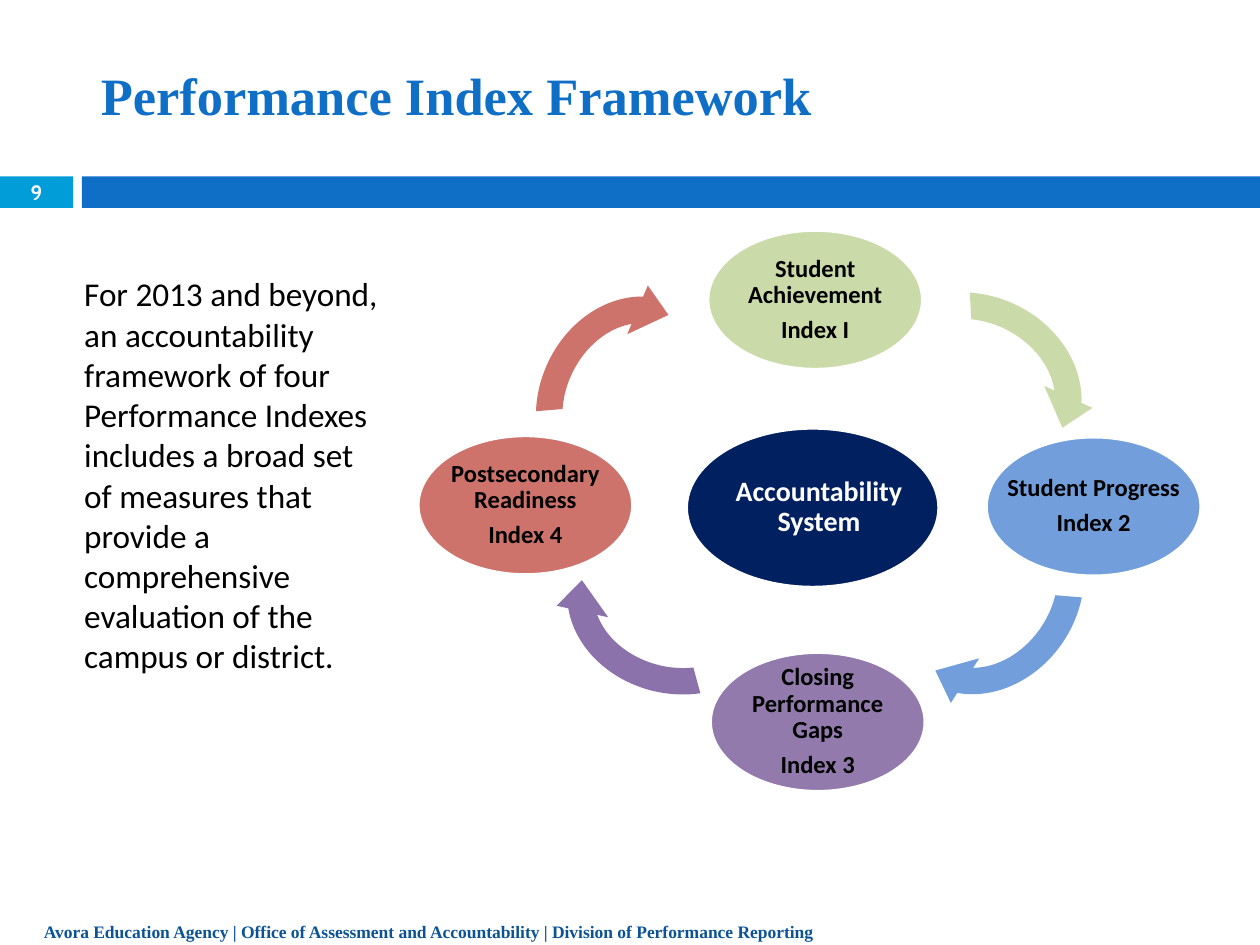
import dataclasses

import pptx
import pptx.dml.color
import pptx.enum.shapes
import pptx.enum.text
import pptx.util

Inches = pptx.util.Inches
Pt = pptx.util.Pt
SHAPE = pptx.enum.shapes.MSO_SHAPE
ALIGN = pptx.enum.text.PP_ALIGN
ANCHOR = pptx.enum.text.MSO_ANCHOR


@dataclasses.dataclass(frozen=True)
class Theme:
    blue: str = "0F6FC6"
    cyan: str = "009DD9"
    footer_blue: str = "0B5395"
    navy: str = "002060"
    green: str = "CADAA9"
    sky: str = "729FDC"
    purple: str = "927AAD"
    arrow_purple: str = "8B72AA"
    red: str = "CD736B"
    white: str = "FFFFFF"
    black: str = "000000"
    serif: str = "Times New Roman"
    sans: str = "Calibri"
    number_font: str = "Cabin"
    title_size: float = 30
    body_size: float = 19
    hub_size: float = 16
    index_size: float = 14
    number_size: float = 11.9
    footer_size: float = 10


THEME = Theme()


def rgb(value):
    return pptx.dml.color.RGBColor.from_string(value)


def place(shape, box):
    shape.left, shape.top, shape.width, shape.height = map(Inches, box)


def write(shape, text, *, size, font=THEME.sans, color=THEME.black, bold=True,
          align=ALIGN.LEFT, anchor=ANCHOR.TOP, spacing=None, after=0, inset=None):
    """Fill a shape with text, one paragraph for each line."""
    frame = shape.text_frame
    frame.word_wrap = True
    frame.vertical_anchor = anchor
    if inset is not None:
        frame.margin_left = frame.margin_right = Inches(inset)
        frame.margin_top = frame.margin_bottom = Inches(inset)
    frame.text = text
    for paragraph in frame.paragraphs:
        paragraph.alignment = align
        paragraph.line_spacing = spacing
        paragraph.space_before = Pt(0)
        paragraph.space_after = Pt(after)
        for run in paragraph.runs:
            run.font.name = font
            run.font.size = Pt(size)
            run.font.bold = bold
            run.font.color.rgb = rgb(color)


def add_text(shapes, box, text, **text_format):
    write(shapes.add_textbox(*map(Inches, box)), text, **text_format)


def add_filled(shapes, kind, box, fill, outline=None):
    shape = shapes.add_shape(kind, *map(Inches, box))
    shape.shadow.inherit = False
    shape.fill.solid()
    shape.fill.fore_color.rgb = rgb(fill)
    if outline:
        shape.line.color.rgb = rgb(outline)
        shape.line.width = Pt(1.5)
    else:
        shape.line.fill.background()
    return shape


def add_node(slide, box, label_box, text, fill, size=THEME.index_size,
             color=THEME.black):
    """Group an ellipse with its label."""
    node = slide.shapes.add_group_shape().shapes
    add_filled(node, SHAPE.OVAL, box, fill, THEME.white)
    add_text(node, label_box, text, size=size, color=color, align=ALIGN.CENTER,
             anchor=ANCHOR.MIDDLE, spacing=0.9, after=0.35 * size, inset=0.02)


def add_index(slide, left, top, label_width, text, fill):
    width, height, label_height = 1.7, 1.1, 0.78
    label_box = (left + (width - label_width) / 2,
                 top + (height - label_height) / 2, label_width, label_height)
    add_node(slide, (left, top, width, height), label_box, text, fill)


def add_cycle_arrow(slide, left, top, rotation, fill):
    arrow = add_filled(slide.shapes, SHAPE.CIRCULAR_ARROW,
                       (left, top, 1.94, 1.68), fill)
    arrow.rotation = rotation
    for i, value in enumerate((0.125, 11.42, 204.58, 145.35, 0.125)):
        arrow.adjustments[i] = value


def main():
    deck = pptx.Presentation()
    deck.slide_width, deck.slide_height = Inches(10), Inches(7.5)
    slide = deck.slides.add_slide(deck.slide_layouts[5])

    # Header band, title and page number
    add_filled(slide.shapes, SHAPE.RECTANGLE, (0, 1.4, 0.58, 0.25), THEME.cyan)
    add_filled(slide.shapes, SHAPE.RECTANGLE, (0.65, 1.4, 9.35, 0.25), THEME.blue)
    title = slide.shapes.title
    place(title, (0.7, 0.3, 9.05, 0.95))
    write(title, "Performance Index Framework", size=THEME.title_size,
          font=THEME.serif, color=THEME.blue, anchor=ANCHOR.MIDDLE, spacing=Pt(32))
    add_text(slide.shapes, (0, 1.39, 0.58, 0.27), "9", size=THEME.number_size,
             font=THEME.number_font, color=THEME.white, align=ALIGN.CENTER,
             anchor=ANCHOR.MIDDLE)

    # Introduction
    add_text(slide.shapes, (0.57, 2.12, 2.59, 3.33),
             "For 2013 and beyond, an accountability framework of four "
             "Performance Indexes includes a broad set of measures that provide "
             "a comprehensive evaluation of the campus or district.",
             size=THEME.body_size, bold=False, spacing=Pt(23))

    # Four indexes around the accountability system
    indexes = [
        (5.62, 1.83, 1.2, "Student Achievement\nIndex I", THEME.green),
        (7.83, 3.47, 1.51, "Student Progress\nIndex 2", THEME.sky),
        (5.64, 5.18, 1.21, "Closing Performance Gaps\nIndex 3", THEME.purple),
        (3.32, 3.46, 1.25, "Postsecondary Readiness\nIndex 4", THEME.red),
    ]
    for index in indexes:
        add_index(slide, *index)
    add_node(slide, (5.45, 3.4, 2, 1.26), (5.76, 3.58, 1.48, 0.89),
             "Accountability System", THEME.navy, THEME.hub_size, THEME.white)

    # Clockwise arrows between the indexes
    cycle_arrows = [
        (6.77, 2.24, 24.5, THEME.green),
        (6.86, 3.84, 122.4, THEME.sky),
        (4.39, 3.93, 192.6, THEME.arrow_purple),
        (4.04, 2.36, 292.9, THEME.red),
    ]
    for cycle_arrow in cycle_arrows:
        add_cycle_arrow(slide, *cycle_arrow)

    # Footer
    add_text(slide.shapes, (0.25, 7.07, 9, 0.41),
             "Avora Education Agency | Office of Assessment and Accountability | "
             "Division of Performance Reporting", size=THEME.footer_size,
             font=THEME.serif, color=THEME.footer_blue, spacing=Pt(26))

    deck.save("out.pptx")


if __name__ == "__main__":
    main()
